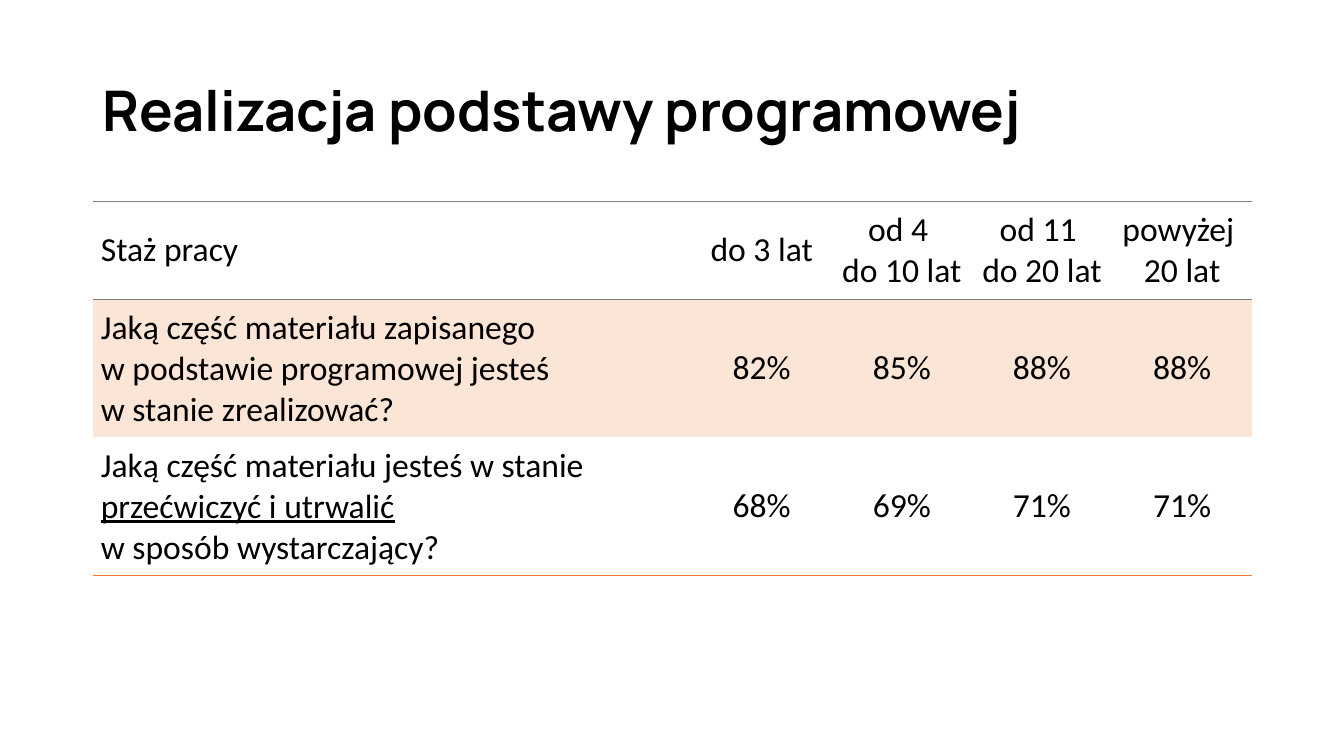
from lxml import etree
from pptx import Presentation
from pptx.dml.color import RGBColor
from pptx.enum.text import MSO_ANCHOR, PP_ALIGN
from pptx.oxml.ns import qn
from pptx.util import Inches, Pt

MIDDLE, BOTTOM = MSO_ANCHOR.MIDDLE, MSO_ANCHOR.BOTTOM
LEFT, CENTER = PP_ALIGN.LEFT, PP_ALIGN.CENTER

TITLE = "Realizacja podstawy programowej"
HEADER = ["Staż pracy", "do 3 lat", "od 4 \vdo 10 lat", "od 11 \vdo 20 lat", "powyżej \v20 lat"]
COVERED = ["Jaką część materiału zapisanego \vw podstawie programowej jesteś \vw stanie zrealizować?",
           "82%", "85%", "88%", "88%"]
PRACTISED = [["Jaką część materiału jesteś w stanie ", "przećwiczyć i utrwalić",
              " \vw sposób wystarczający?"],
             "68%", "69%", "71%", "71%"]
UNDERLINED = "przećwiczyć i utrwalić"

BLACK, PEACH, ORANGE, GRAY = "000000", "FBE5D6", "ED7D31", "808080"
ROWS = [
    {"cells": HEADER, "height": 0.97, "anchor": MIDDLE, "fill": None,
     "lines": {"lnT": (GRAY, 0.5), "lnB": (GRAY, 0.5)}},
    {"cells": COVERED, "height": 1.37, "anchor": BOTTOM, "fill": PEACH,
     "lines": {"lnT": (GRAY, 0.5)}},
    {"cells": PRACTISED, "height": 1.37, "anchor": BOTTOM, "fill": None,
     "lines": {"lnB": (ORANGE, 1)}},
]
SLIDE_W, SLIDE_H = 13.33, 7.5
MARGIN, CONTENT_W = 0.92, 11.5
TITLE_TOP, TITLE_H, TABLE_TOP = 0.4, 1.45, 2
YEARS_W, CELL_INSET = 1.39, 0.08
PLAIN_STYLE = "{2D5ABB26-0587-4C30-8999-92F81FD0307C}"


def color(code):
    """Turn a hex string into a colour."""
    return RGBColor.from_string(code)


def write(frame, text, size=24, font="Calibri", bold=False, align=LEFT, spacing=1.0):
    """Write a string, or a list of run strings, as one formatted paragraph."""
    frame.word_wrap = True
    paragraph = frame.paragraphs[0]
    paragraph.alignment = align
    paragraph.line_spacing = spacing
    for part in [text] if isinstance(text, str) else text:
        for index, line in enumerate(part.split("\v")):
            if index:
                paragraph.add_line_break()
            if not line:
                continue
            run = paragraph.add_run()
            run.text = line
            run.font.size, run.font.name, run.font.bold = Pt(size), font, bold
            run.font.underline = line == UNDERLINED
            run.font.color.rgb = color(BLACK)
    for line_break in paragraph._p.findall(qn("a:br")):
        etree.SubElement(line_break, qn("a:rPr"), sz=str(size * 100))


def set_borders(cell, lines):
    """Draw the given sides of a cell and hide the others."""
    properties = cell._tc.get_or_add_tcPr()
    for side in ("lnL", "lnR", "lnT", "lnB"):
        if side in lines:
            code, width = lines[side]
            border = etree.SubElement(properties, qn("a:" + side), w=str(Pt(width)))
            paint = etree.SubElement(border, qn("a:solidFill"))
            etree.SubElement(paint, qn("a:srgbClr"), val=code)
        else:
            border = etree.SubElement(properties, qn("a:" + side), w="0")
            etree.SubElement(border, qn("a:noFill"))


def add_title(slide):
    """Place the slide title."""
    title = slide.shapes.add_textbox(Inches(MARGIN), Inches(TITLE_TOP),
                                     Inches(CONTENT_W), Inches(TITLE_H))
    title.text_frame.vertical_anchor = MIDDLE
    write(title.text_frame, TITLE, size=40, font="Manrope", bold=True, spacing=0.9)


def add_results(slide):
    """Place the table of answers by years of work."""
    columns = len(HEADER)
    height = sum(row["height"] for row in ROWS)
    table = slide.shapes.add_table(len(ROWS), columns, Inches(MARGIN), Inches(TABLE_TOP),
                                   Inches(CONTENT_W), Inches(height)).table
    table._tbl.tblPr.find(qn("a:tableStyleId")).text = PLAIN_STYLE
    table.first_row = table.horz_banding = False
    question_w = CONTENT_W - YEARS_W * (columns - 1)
    for index, column in enumerate(table.columns):
        column.width = Inches(YEARS_W if index else question_w)
    for r, row in enumerate(ROWS):
        table.rows[r].height = Inches(row["height"])
        for c, text in enumerate(row["cells"]):
            cell = table.cell(r, c)
            cell.margin_left = cell.margin_right = Inches(CELL_INSET)
            cell.margin_top = cell.margin_bottom = Inches(CELL_INSET)
            cell.vertical_anchor = MIDDLE if c else row["anchor"]
            set_borders(cell, row["lines"])
            if row["fill"]:
                cell.fill.solid()
                cell.fill.fore_color.rgb = color(row["fill"])
            else:
                cell.fill.background()
            write(cell.text_frame, text, align=CENTER if c else LEFT)


def main():
    """Build the slide and save it."""
    deck = Presentation()
    deck.slide_width, deck.slide_height = Inches(SLIDE_W), Inches(SLIDE_H)
    slide = deck.slides.add_slide(deck.slide_layouts[6])
    add_title(slide)
    add_results(slide)
    deck.save("out.pptx")


if __name__ == "__main__":
    main()
